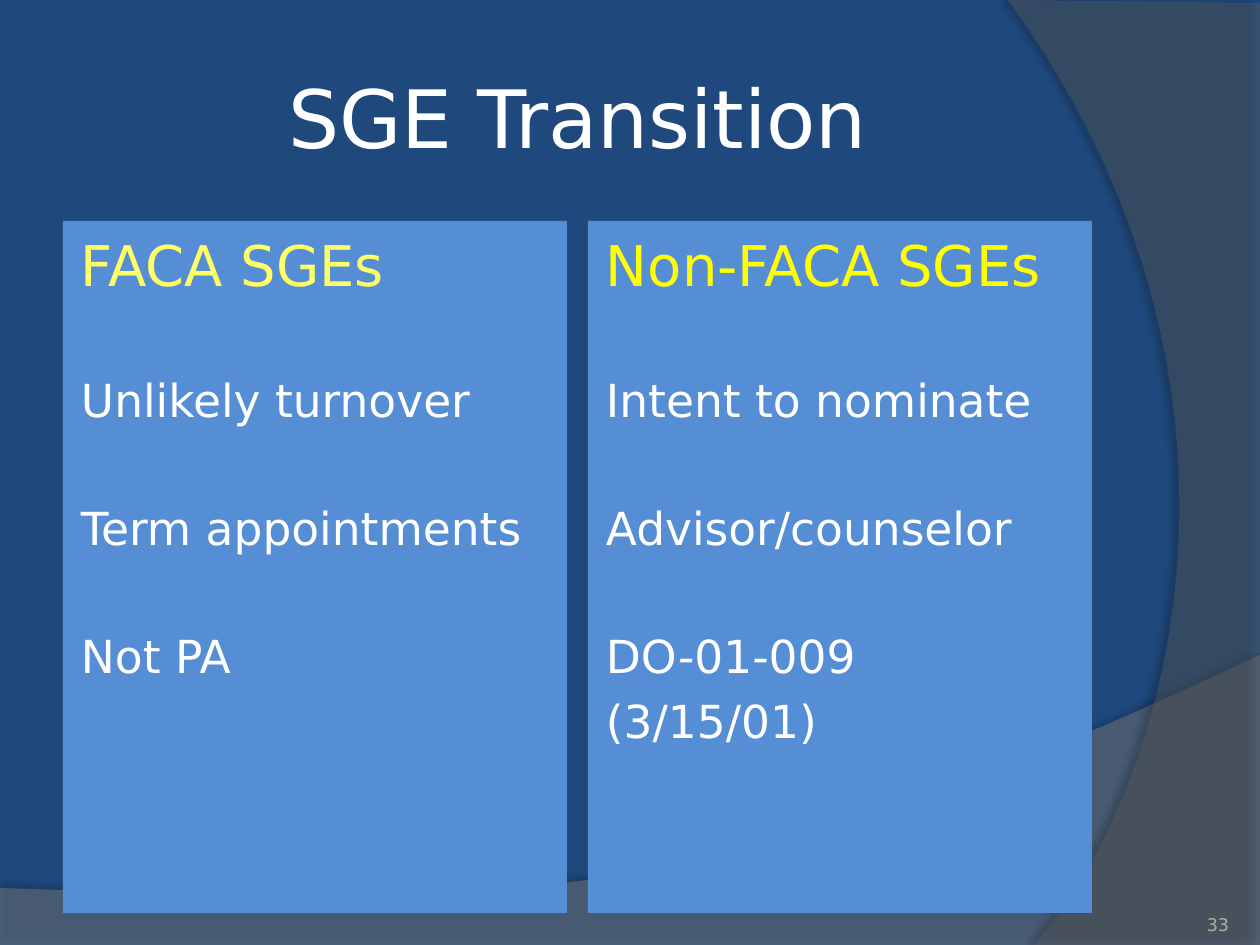
from dataclasses import dataclass

from lxml import etree
from pptx import Presentation
from pptx.dml.color import RGBColor
from pptx.enum.shapes import MSO_SHAPE
from pptx.enum.text import MSO_ANCHOR, PP_ALIGN
from pptx.oxml.ns import qn
from pptx.util import Pt

RECT = MSO_SHAPE.RECTANGLE
TOP, MIDDLE, BOTTOM = MSO_ANCHOR.TOP, MSO_ANCHOR.MIDDLE, MSO_ANCHOR.BOTTOM
LEFT, CENTER, RIGHT = PP_ALIGN.LEFT, PP_ALIGN.CENTER, PP_ALIGN.RIGHT
SCALE = 914400 / 126


@dataclass(frozen=True)
class Theme:
    """Colours, font and type sizes of the slide."""
    font: str = "DejaVu Sans"
    back: str = "1F497D"
    panel: str = "558ED5"
    band: str = "7F7F7F"
    arc: str = "5E5E5E"
    shade: str = "000000"
    text: str = "FFFFFF"
    pale: str = "FFFF66"
    yellow: str = "FFFF00"
    number: str = "B0AFA6"
    title: int = 46
    head: int = 32
    body: int = 26
    small: int = 10
    gap: int = 42
    near: int = 6


THEME = Theme()


def px(value):
    """Turn pixels into EMU."""
    return round(value * SCALE)


def paint(fill, color):
    """Set a solid fill."""
    fill.solid()
    fill.fore_color.rgb = RGBColor.from_string(color)


def curve(start, first, second, end, steps=40):
    """Return points along a cubic curve, without its start."""
    points = []
    for step in range(1, steps + 1):
        t = step / steps
        weights = (1 - t) ** 3, 3 * t * (1 - t) ** 2, 3 * t * t * (1 - t), t ** 3
        knots = start, first, second, end
        points.append(tuple(sum(w * k[axis] for w, k in zip(weights, knots)) for axis in (0, 1)))
    return points


def add_wave(slide, points, color, alpha, shadow):
    """Draw a translucent outline with a soft shadow."""
    start, *rest = [(px(x), px(y)) for x, y in points]
    pen = slide.shapes.build_freeform(*start, scale=1)
    pen.add_line_segments(rest, close=True)
    wave = pen.convert_to_shape()
    wave.line.fill.background()
    paint(wave.fill, color)
    tone = wave.fill._xPr.find(qn("a:solidFill"))[0]
    etree.SubElement(tone, qn("a:alpha"), val=str(alpha * 1000))
    wave.shadow.inherit = False
    depth, far, angle = shadow
    effects = wave._element.spPr.find(qn("a:effectLst"))
    cast = etree.SubElement(effects, qn("a:outerShdw"), blurRad=str(Pt(4)),
                            dist=str(Pt(far)), dir=str(angle * 60000), rotWithShape="0")
    shade = etree.SubElement(cast, qn("a:srgbClr"), val=THEME.shade)
    etree.SubElement(shade, qn("a:alpha"), val=str(depth * 1000))


def set_frame(shape, anchor, sides, ends):
    """Set wrap, anchor and margins, and return the text frame."""
    frame = shape.text_frame
    frame.word_wrap = True
    frame.vertical_anchor = anchor
    frame.margin_left = frame.margin_right = px(sides)
    frame.margin_top = frame.margin_bottom = px(ends)
    return frame


def write(para, text, size, color, align=LEFT, before=0):
    """Fill one paragraph with styled text."""
    para.text = text
    para.alignment = align
    para.space_before = Pt(before)
    para.font.name = THEME.font
    para.font.size = Pt(size)
    para.font.color.rgb = RGBColor.from_string(color)


def add_label(slide, box, text, size, color, anchor, align, inset):
    """Add a text box with one line."""
    label = slide.shapes.add_textbox(*map(px, box))
    frame = set_frame(label, anchor, inset, inset)
    write(frame.paragraphs[0], text, size, color, align)


def add_panel(slide, box, head, color, items):
    """Add a filled panel with a heading and (text, space before) items."""
    panel = slide.shapes.add_shape(RECT, *map(px, box))
    panel.shadow.inherit = False
    paint(panel.fill, THEME.panel)
    panel.line.fill.background()
    frame = set_frame(panel, TOP, 18, 10)
    write(frame.paragraphs[0], head, THEME.head, color)
    for text, before in items:
        write(frame.add_paragraph(), text, THEME.body, THEME.text, before=before)


def main():
    """Build and save the slide."""
    deck = Presentation()
    deck.slide_width, deck.slide_height = px(1260), px(945)
    slide = deck.slides.add_slide(deck.slide_layouts[6])
    paint(slide.background.fill, THEME.back)

    crest = curve((1260, 655), (704, 919), (493, 906), (0, 888))
    add_wave(slide, [(0, 946), (1260, 946), (1260, 655)] + crest,
             THEME.band, 45, (35, 3.5, 270))
    edge = curve((1034, 945), (1178, 780), (1283, 378), (1008, 0))
    add_wave(slide, [(1260, 3), (1260, 945), (1034, 945)] + edge,
             THEME.arc, 40, (45, 4, 180))

    add_label(slide, (63, 38, 1029, 157), "SGE Transition",
              THEME.title, THEME.text, MIDDLE, CENTER, 6)
    gap, near = THEME.gap, THEME.near
    panels = [
        ("FACA SGEs", THEME.pale,
         [("Unlikely turnover", gap), ("Term appointments", gap), ("Not PA", gap)]),
        ("Non-FACA SGEs", THEME.yellow,
         [("Intent to nominate", gap), ("Advisor/counselor", gap),
          ("DO-01-009", gap), ("(3/15/01)", near)]),
    ]
    for index, panel in enumerate(panels):
        add_panel(slide, (63 + index * 525, 221, 504, 692), *panel)
    add_label(slide, (1124, 885, 105, 50), "33",
              THEME.small, THEME.number, BOTTOM, RIGHT, 0)
    deck.save("out.pptx")


if __name__ == "__main__":
    main()
